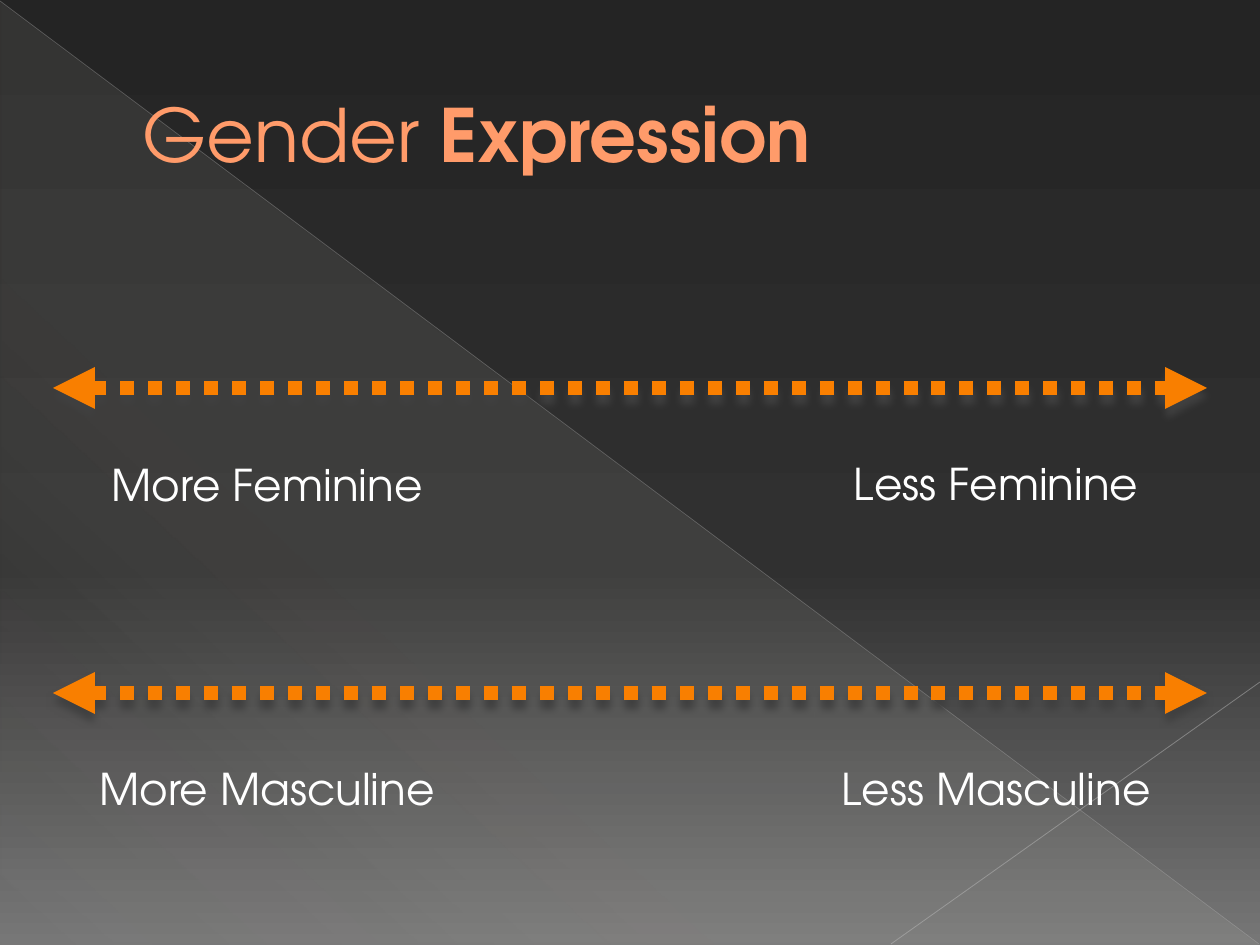
from lxml.etree import SubElement
from pptx import Presentation
from pptx.dml.color import RGBColor
from pptx.enum.dml import MSO_LINE
from pptx.enum.shapes import MSO_CONNECTOR as Connector, MSO_SHAPE as Preset
from pptx.enum.text import MSO_ANCHOR as Anchor, MSO_AUTO_SIZE as AutoSize, PP_ALIGN as Align
from pptx.oxml import parse_xml
from pptx.oxml.ns import nsdecls, qn
from pptx.util import Pt


def px(length):
    return round(length * 914400 / 126)


def color(value):
    return RGBColor.from_string(value)


class SlideBuilder:
    """Holds the style and the current slide, and adds each kind of element."""

    font = "TeX Gyre Adventor"
    title_color = "FF9B6A"
    text_color = "FFFFFF"
    arrow_color = "F97F00"
    shadow_color = "404040"

    def __init__(self, slide):
        self.slide = slide

    def place(self, shape, left, top, width, height):
        shape.left, shape.top = px(left), px(top)
        shape.width, shape.height = px(width), px(height)

    def paint_gradient(self, fill, element, stops, angle):
        fill.gradient()
        marks = "".join(
            f'<a:gs pos="{position * 1000}"><a:srgbClr val="{value}">'
            f'<a:alpha val="{opacity * 1000}"/></a:srgbClr></a:gs>'
            for position, value, opacity in stops
        )
        gradient = parse_xml(
            f'<a:gradFill {nsdecls("a")} rotWithShape="1"><a:gsLst>{marks}</a:gsLst>'
            f'<a:lin ang="{angle * 60000}" scaled="0"/></a:gradFill>'
        )
        former = element.find(".//" + qn("a:gradFill"))
        former.getparent().replace(former, gradient)

    def background(self, stops, angle):
        self.paint_gradient(self.slide.background.fill, self.slide.element, stops, angle)

    def triangle(self, left, top, width, height, stops, angle):
        shape = self.slide.shapes.add_shape(
            Preset.RIGHT_TRIANGLE, px(left), px(top), px(width), px(height))
        shape.shadow.inherit = False
        shape.line.fill.background()
        self.paint_gradient(shape.fill, shape.element, stops, angle)

    def line(self, start, end, value, width, opacity=100):
        connector = self.slide.shapes.add_connector(
            Connector.STRAIGHT, *map(px, start), *map(px, end))
        connector.line.color.rgb = color(value)
        connector.line.width = Pt(width)
        if opacity < 100:
            tint = connector.element.find(".//" + qn("a:srgbClr"))
            SubElement(tint, qn("a:alpha"), val=str(opacity * 1000))
        SubElement(connector.element.spPr, qn("a:effectLst"))
        return connector

    def arrow(self, start, end):
        connector = self.line(start, end, self.arrow_color, 8)
        connector.line.dash_style = MSO_LINE.ROUND_DOT
        properties = connector.element.spPr
        for name in ("a:headEnd", "a:tailEnd"):
            SubElement(properties.find(qn("a:ln")), qn(name), type="triangle")
        shadow = SubElement(
            properties.find(qn("a:effectLst")), qn("a:outerShdw"), blurRad=str(Pt(4)),
            dist=str(Pt(4)), dir="5400000", algn="ctr", rotWithShape="0")
        SubElement(shadow, qn("a:srgbClr"), val=self.shadow_color)

    def add_text(self, paragraph, text, size, value, bold=False):
        run = paragraph.add_run()
        run.text = text
        run.font.name = self.font
        run.font.size = Pt(size)
        run.font.bold = bold
        run.font.color.rgb = color(value)

    def indent(self, paragraph, margin, first_line):
        properties = paragraph._p.get_or_add_pPr()
        properties.set("marL", str(px(margin)))
        properties.set("indent", str(px(first_line)))
        return properties

    def bring_forward(self, shape):
        self.slide.shapes.element.append(shape.element)

    def title(self, runs, *box):
        shape = self.slide.shapes.title
        self.bring_forward(shape)
        self.place(shape, *box)
        frame = shape.text_frame
        frame.vertical_anchor = Anchor.MIDDLE
        frame.auto_size = AutoSize.NONE
        paragraph = frame.paragraphs[0]
        paragraph.alignment = Align.LEFT
        self.indent(paragraph, 67, 0)
        for text, bold in runs:
            self.add_text(paragraph, text, 42, self.title_color, bold)

    def label(self, shape, text, *box):
        self.bring_forward(shape)
        self.place(shape, *box)
        frame = shape.text_frame
        frame.word_wrap = True
        frame.auto_size = AutoSize.NONE
        frame.vertical_anchor = Anchor.TOP
        paragraph = frame.paragraphs[0]
        paragraph.alignment = Align.CENTER
        paragraph.space_before = Pt(5)
        SubElement(self.indent(paragraph, 62, -53), qn("a:buNone"))
        self.add_text(paragraph, text, 25, self.text_color)

    def body_label(self, text, *box):
        self.label(self.slide.placeholders[1], text, *box)

    def text_label(self, text, *box):
        self.label(self.slide.shapes.add_textbox(0, 0, 0, 0), text, *box)


def main():
    presentation = Presentation()
    presentation.slide_width, presentation.slide_height = px(1260), px(945)
    builder = SlideBuilder(presentation.slides.add_slide(presentation.slide_layouts[1]))

    builder.background([(0, "242424", 100), (60, "303030", 100), (100, "767676", 100)], 90)
    builder.triangle(1, 2, 1258, 942,
                     [(0, "E3DED1", 10), (70, "E3DED1", 8), (100, "E3DED1", 1)], 133)
    builder.line((0, 1), (1259, 944), "B6B6B6", 0.39, 35)
    builder.line((1260, 682), (891, 944), "BFBFBF", 0.47, 45)

    builder.title([("Gender ", False), ("Expression", True)], 63, 37, 1134, 193)
    scales = [("Feminine", 388, 451, builder.body_label),
              ("Masculine", 693, 756, builder.text_label)]
    for trait, arrow_top, label_top, add_more in scales:
        builder.arrow((53, arrow_top), (1207, arrow_top))
        add_more(f"More {trait}", 21, label_top, 483, 73)
        builder.text_label(f"Less {trait}", 766, label_top, 451, 73)

    presentation.save("out.pptx")


if __name__ == "__main__":
    main()
